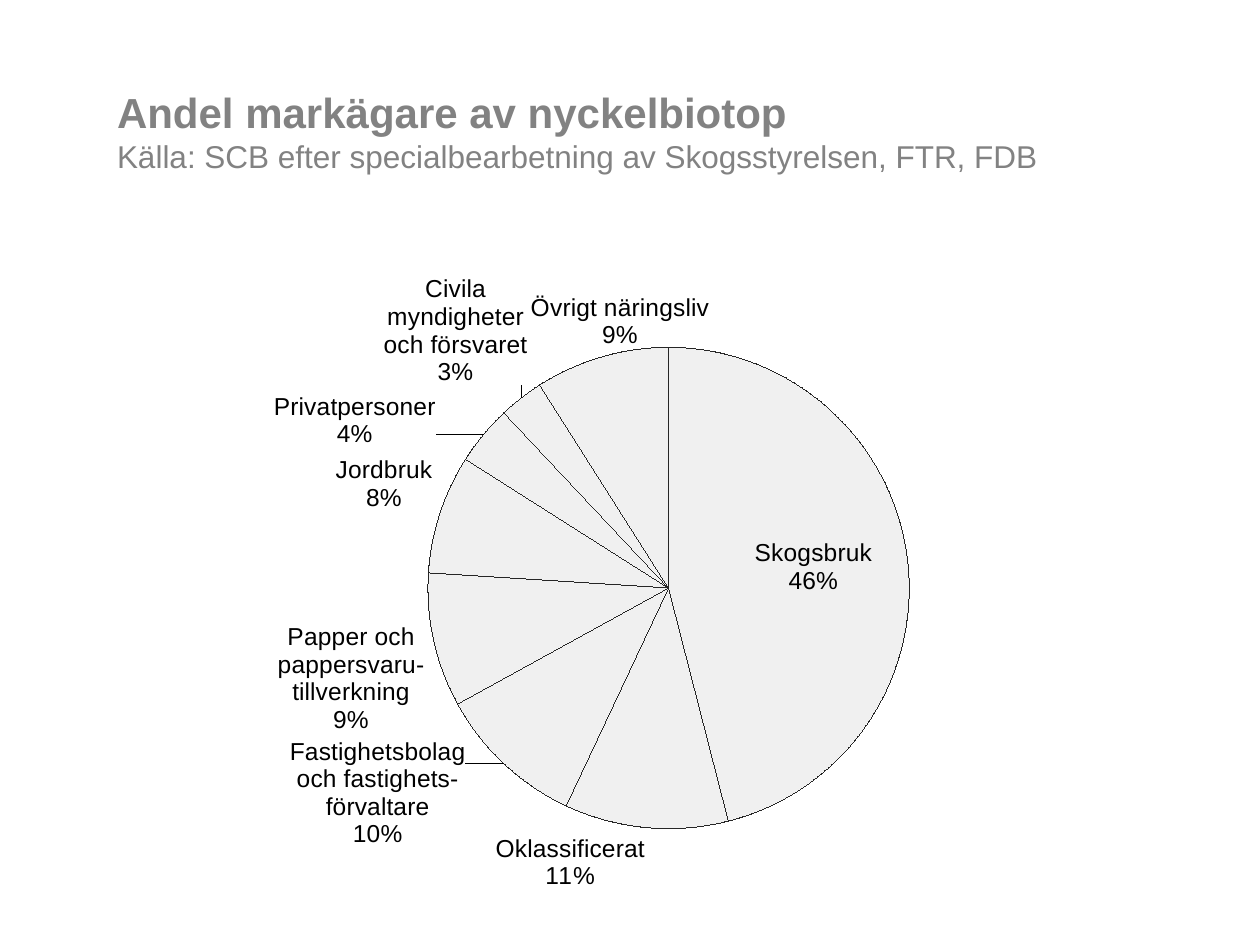
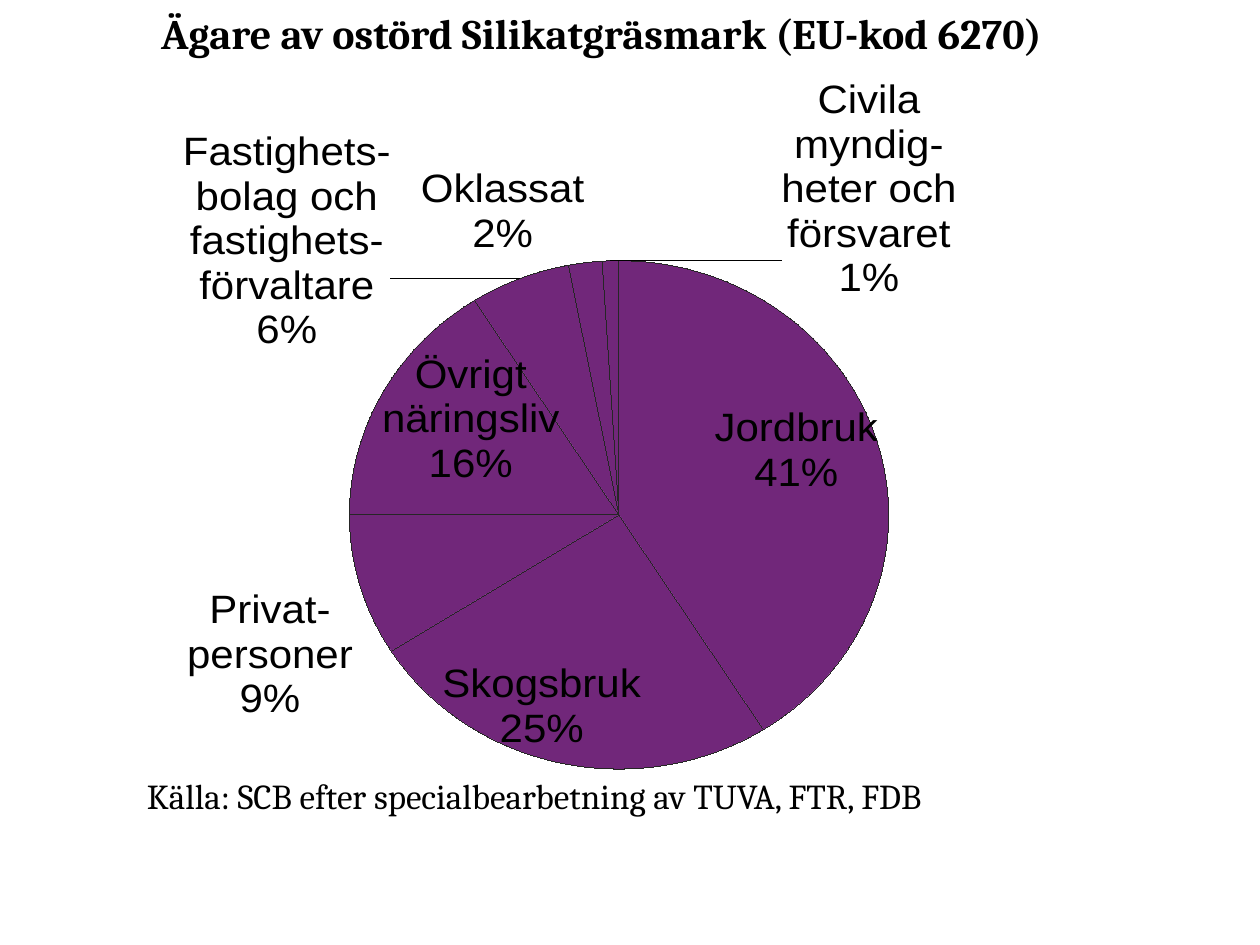
from lxml import etree
from pptx import Presentation
from pptx.chart.data import CategoryChartData
from pptx.dml.color import RGBColor
from pptx.enum import chart as ch, text
from pptx.oxml import ns
from pptx.util import Emu, Pt

GREY, BLACK, OUTLINE = "828282", "000000", "262626"
TITLE, SOURCE = 24, 18


def px(n):
    return Emu(round(n * 914400 / 126))


def style(font, name, size, color, bold=False):
    font.name, font.size, font.bold = name, Pt(size), bold
    font.color.rgb = RGBColor.from_string(color)


slides = [
    {
        "texts": [
            ((104, 52, 1142, 158), 13, [
                ("Andel markägare av nyckelbiotop", "Arial", TITLE, GREY, True),
                ("Källa: SCB efter specialbearbetning av Skogsstyrelsen, FTR, FDB",
                 "Arial", SOURCE, GREY, False)]),
        ],
        "chart": (184, 244, 942, 674),
        "plot": (428, 347, 481, 482),
        "fill": "F0F0F0",
        "label_size": 14,
        "slices": [
            ("Skogsbruk", 46, None, (-160, 38)),
            ("Oklassificerat", 11, None, None),
            ("Fastighetsbolag och fastighetsförvaltare", 10,
             "Fastighetsbolag och fastighets-förvaltare", (-33, -31)),
            ("Papper och pappersvarutillverkning", 9,
             "Papper och pappersvaru-tillverkning", (-2, -19)),
            ("Jordbruk", 8, None, None),
            ("Privatpersoner", 4, None, (-41, 18)),
            ("Civila myndigheter och försvaret", 3,
             "Civila myndigheter\noch försvaret", (11, -6)),
            ("Övrigt näringsliv", 9, None, (110, -1)),
        ],
    },
    {
        "texts": [
            ((0, 1, 1206, 63), 161, [
                ("Ägare av ostörd Silikatgräsmark (EU-kod 6270)", "Cambria", 24, BLACK, True)]),
            ((134, 768, 1032, 55), 13, [
                ("Källa: SCB efter specialbearbetning av TUVA, FTR, FDB",
                 "Cambria", 20, BLACK, False)]),
        ],
        "chart": (35, 31, 1160, 828),
        "plot": (349, 175, 539, 640),
        "fill": "71277A",
        "label_size": 24,
        "slices": [
            ("Jordbruk", 41, None, (-171, 56)),
            ("Skogsbruk", 25, None, (82, -114)),
            ("Privatpersoner", 9, "Privat-personer", None),
            ("Övrigt näringsliv", 16, None, (183, 103)),
            ("Fastighetsbolag och fastighetsförvaltare", 6,
             "Fastighets-bolag och fastighets-förvaltare", (-126, 85)),
            ("Oklassificerat", 2, "Oklassat", None),
            ("Civila myndigheter och försvaret", 1,
             "Civila myndig-heter och försvaret", (259, 47)),
        ],
    },
]

prs = Presentation()
prs.slide_width, prs.slide_height = px(1260), px(945)

for page in slides:
    s = prs.slides.add_slide(prs.slide_layouts[6])

    cx, cy, cw, chh = page["chart"]
    data = CategoryChartData()
    data.categories = [name for name, *rest in page["slices"]]
    data.add_series("Series 1", [value for name, value, *rest in page["slices"]])
    chart = s.shapes.add_chart(ch.XL_CHART_TYPE.PIE, *map(px, page["chart"]), data).chart
    chart.has_legend = chart.has_title = False
    style(chart.font, "Calibri", 10, BLACK)

    plot = chart.plots[0]
    plot.vary_by_categories = False
    series = plot.series[0]

    labels = series.data_labels
    style(labels.font, "Arial", page["label_size"], BLACK)
    labels.position = ch.XL_LABEL_POSITION.OUTSIDE_END

    layouts = []
    for i, (name, value, wording, shift) in enumerate(page["slices"]):
        point = series.points[i]
        point.format.fill.solid()
        point.format.fill.fore_color.rgb = RGBColor.from_string(page["fill"])
        point.format.line.color.rgb = RGBColor.from_string(OUTLINE)
        point.format.line.width = Pt(0)
        if not (wording or shift):
            continue
        label = point.data_label
        if wording:
            label.text_frame.text = f"{wording}\n{value}%"
            for p in label.text_frame.paragraphs:
                style(p.font, "Arial", page["label_size"], BLACK)
        else:
            style(label.font, "Arial", page["label_size"], BLACK)
        label.position = ch.XL_LABEL_POSITION.OUTSIDE_END
        if shift:
            idx = series._element.xpath(f"c:dLbls/c:dLbl/c:idx[@val='{i}']")[0]
            layouts.append((idx, [("x", shift[0] / cw), ("y", shift[1] / chh)]))

    left, top, width, height = page["plot"]
    area = plot._element.getparent()
    for old in area.findall(ns.qn("c:layout")):
        area.remove(old)
    inner = [("layoutTarget", "inner"), ("xMode", "edge"), ("yMode", "edge"),
             ("x", (left - cx) / cw), ("y", (top - cy) / chh),
             ("w", width / cw), ("h", height / chh)]
    for anchor, entries in layouts + [(None, inner)]:
        layout = etree.Element(ns.qn("c:layout"))
        manual = etree.SubElement(layout, ns.qn("c:manualLayout"))
        for tag, val in entries:
            val = val if isinstance(val, str) else f"{val:.3f}"
            etree.SubElement(manual, ns.qn(f"c:{tag}")).set("val", val)
        if anchor is None:
            area.insert(0, layout)
        else:
            anchor.addnext(layout)

    for tag, val in [("showVal", "0"), ("showCatName", "1"), ("showPercent", "1")]:
        for flag in series._element.iter(ns.qn(f"c:{tag}")):
            flag.set("val", val)
    for flag in series._element.xpath(".//c:showBubbleSize"):
        separator = etree.Element(ns.qn("c:separator"))
        separator.text = "\n"
        flag.addnext(separator)

    for box, inset, lines in page["texts"]:
        tf = s.shapes.add_textbox(*map(px, box)).text_frame
        tf.word_wrap = True
        tf.vertical_anchor = text.MSO_ANCHOR.MIDDLE
        tf.margin_left = px(inset)
        for i, (wording, *look) in enumerate(lines):
            p = tf.add_paragraph() if i else tf.paragraphs[0]
            p.text = wording
            style(p.font, *look)

prs.save("out.pptx")
